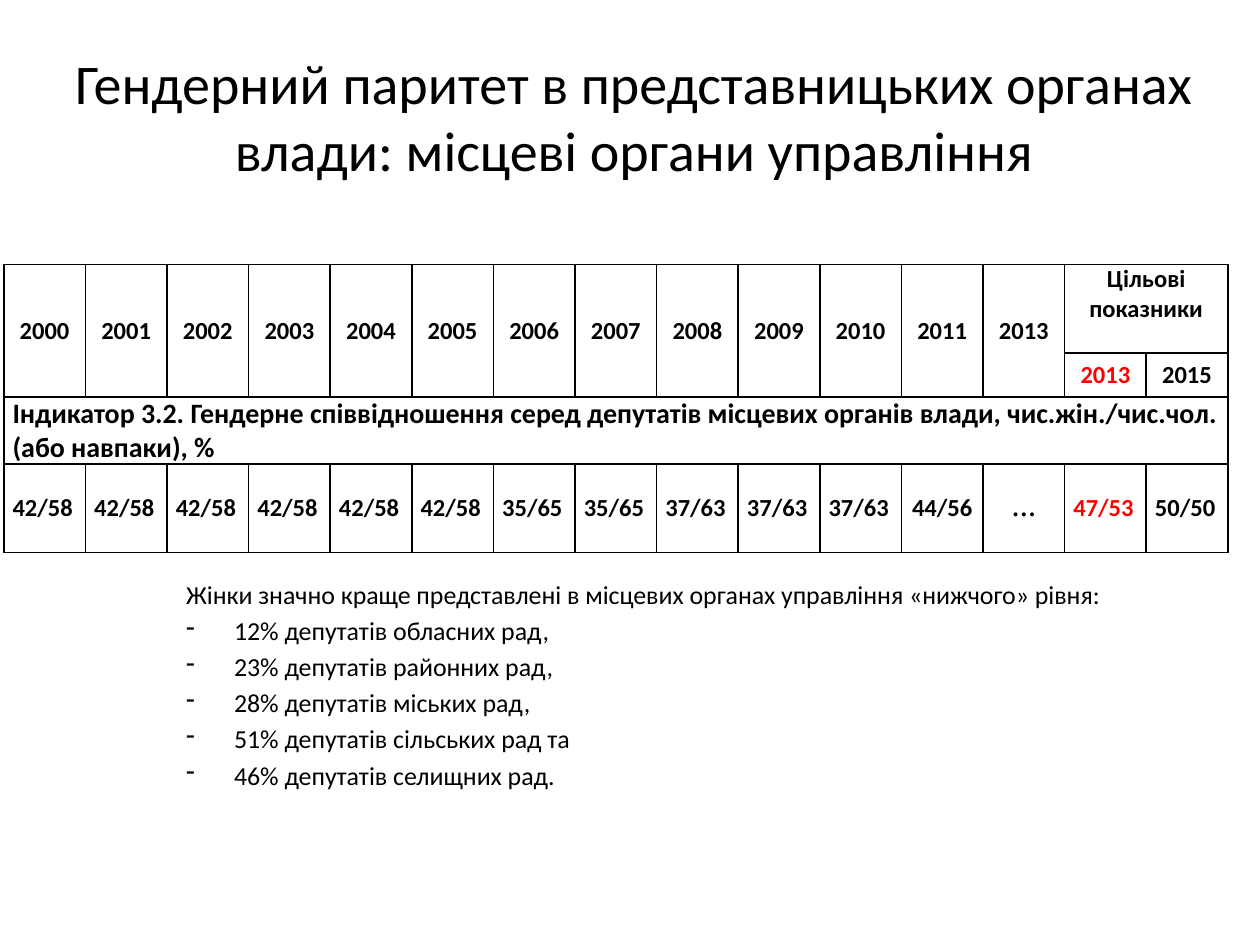
"""Build a slide with a table and notes on gender parity in local councils."""
from dataclasses import dataclass

from lxml import etree
from pptx import Presentation
from pptx.dml.color import RGBColor
from pptx.enum.text import MSO_ANCHOR, PP_ALIGN
from pptx.oxml.ns import qn
from pptx.util import Inches, Pt

LEFT, CENTER = PP_ALIGN.LEFT, PP_ALIGN.CENTER
TOP, MIDDLE = MSO_ANCHOR.TOP, MSO_ANCHOR.MIDDLE


@dataclass(frozen=True)
class Theme:
    font: str = "Calibri"
    ellipsis_font: str = "Times New Roman"
    ink: str = "000000"
    accent: str = "FF0000"
    title_size: float = 32
    body_size: float = 14.8
    cell_size: float = 14
    indicator_size: float = 16
    border: float = 1


THEME = Theme()
COLUMN, ROW = 0.648, 0.35
ROW_SHARES = [2, 1, 1.5, 2]
YEARS = [*range(2000, 2012), 2013]
TARGET_YEARS = [2013, 2015]
RATIOS = ["42/58"] * 6 + ["35/65"] * 2 + ["37/63"] * 3 + ["44/56", "…", "47/53", "50/50"]
COUNCILS = [
    "12% депутатів обласних рад,",
    "23% депутатів районних рад,",
    "28% депутатів міських рад,",
    "51% депутатів сільських рад та",
    "46% депутатів селищних рад.",
]


def style(paragraph, size, align=LEFT, color=THEME.ink, bold=False, font=THEME.font):
    paragraph.alignment = align
    for run in paragraph.runs:
        run.font.size, run.font.bold, run.font.name = Pt(size), bold, font
        run.font.color.rgb = RGBColor.from_string(color)


def write_cell(cell, text, size=THEME.cell_size, align=CENTER, anchor=MIDDLE, **look):
    cell.text_frame.text = str(text)
    cell.vertical_anchor = anchor
    paragraph = cell.text_frame.paragraphs[0]
    paragraph.space_before = paragraph.space_after = Pt(6)
    style(paragraph, size, align, bold=True, **look)


presentation = Presentation()
presentation.slide_width, presentation.slide_height = Inches(10), Inches(7.5)
slide = presentation.slides.add_slide(presentation.slide_layouts[6])

title = slide.shapes.add_textbox(Inches(0.35), Inches(0.29), Inches(9.37), Inches(1.25)).text_frame
title.word_wrap = True
title.vertical_anchor = MIDDLE
title.text = "Гендерний паритет в представницьких органах влади: місцеві органи управління"
style(title.paragraphs[0], THEME.title_size, CENTER)

body = slide.shapes.add_textbox(Inches(1.38), Inches(4.54), Inches(7.57), Inches(2)).text_frame
body.word_wrap = True
body.text = "\n".join(
    ["Жінки значно краще представлені в місцевих органах управління «нижчого» рівня:", *COUNCILS]
)
for index, paragraph in enumerate(body.paragraphs):
    style(paragraph, THEME.body_size)
    paragraph.space_before = Pt(0.2 * THEME.body_size)
    if index:
        properties = paragraph._p.get_or_add_pPr()
        properties.set("marL", str(Inches(0.38)))
        properties.set("indent", str(-Inches(0.38)))
        etree.SubElement(properties, qn("a:buChar"), char="-")

column_count = len(RATIOS)
table = slide.shapes.add_table(
    len(ROW_SHARES), column_count, Inches(0.03), Inches(2.1),
    Inches(COLUMN * column_count), Inches(ROW * sum(ROW_SHARES)),
).table
table.first_row = table.horz_banding = False
for column in table.columns:
    column.width = Inches(COLUMN)
for row, share in zip(table.rows, ROW_SHARES):
    row.height = Inches(ROW * share)

for cell in table.iter_cells():
    cell.margin_left = cell.margin_right = Inches(0.07)
    cell.margin_top = cell.margin_bottom = 0
    cell.fill.background()
    properties = cell._tc.get_or_add_tcPr()
    for position, side in enumerate(["lnL", "lnR", "lnT", "lnB"]):
        line = etree.Element(qn(f"a:{side}"), w=str(Pt(THEME.border)))
        fill = etree.SubElement(line, qn("a:solidFill"))
        etree.SubElement(fill, qn("a:srgbClr"), val=THEME.ink)
        properties.insert(position, line)

target_column = len(YEARS)
for column, year in enumerate(YEARS):
    table.cell(0, column).merge(table.cell(1, column))
    write_cell(table.cell(0, column), year)
table.cell(0, target_column).merge(table.cell(0, column_count - 1))
write_cell(table.cell(0, target_column), "Цільові показники", anchor=TOP)
for column, year in enumerate(TARGET_YEARS, target_column):
    color = THEME.accent if column == target_column else THEME.ink
    write_cell(table.cell(1, column), year, color=color)

table.cell(2, 0).merge(table.cell(2, column_count - 1))
write_cell(
    table.cell(2, 0),
    "Індикатор 3.2. Гендерне співвідношення серед депутатів місцевих органів влади, "
    "чис.жін./чис.чол. (або навпаки), %",
    THEME.indicator_size, LEFT, TOP,
)
for column, ratio in enumerate(RATIOS):
    write_cell(
        table.cell(3, column), ratio,
        align=CENTER if ratio in ("44/56", "…") else LEFT,
        color=THEME.accent if column == target_column else THEME.ink,
        font=THEME.ellipsis_font if ratio == "…" else THEME.font,
    )

presentation.save("out.pptx")
